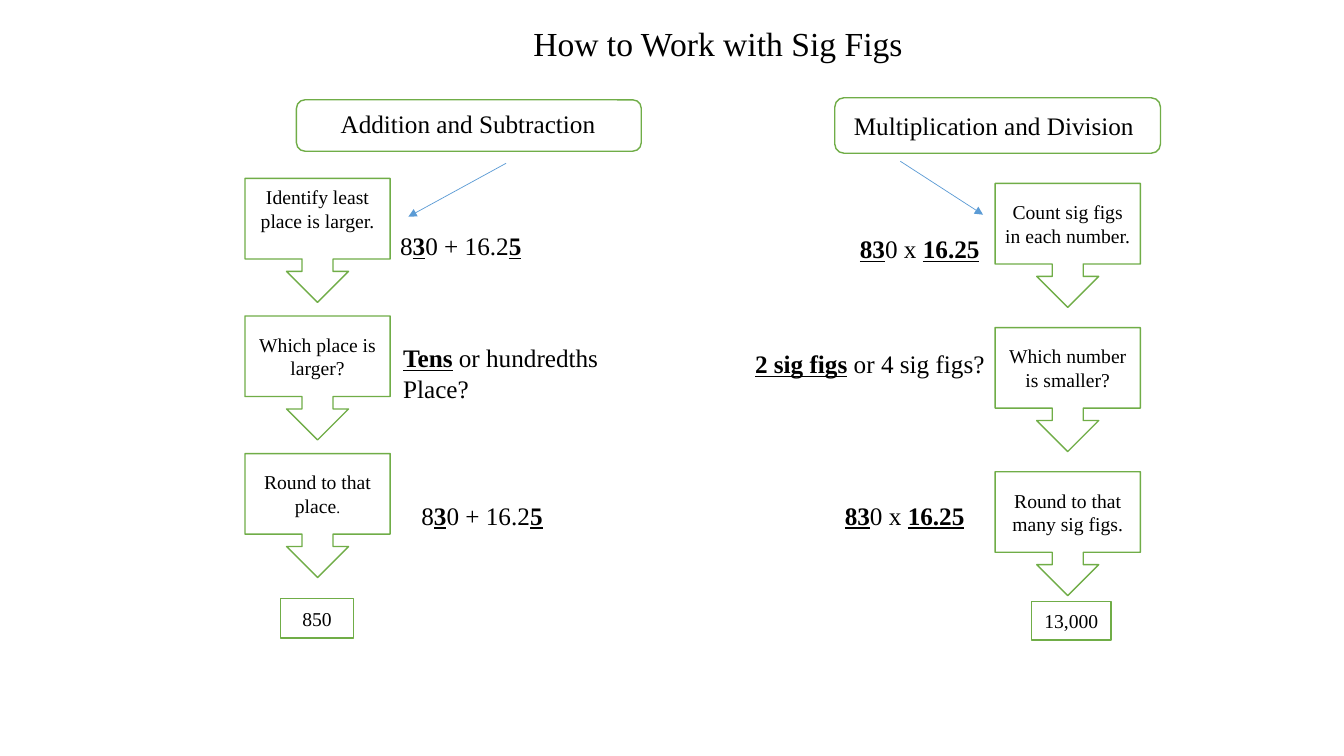
"""Builds a slide with two flowcharts on working with significant figures."""
from lxml import etree
from pptx import Presentation, util as u
from pptx.dml.color import RGBColor
from pptx.enum import shapes, text
from pptx.oxml.ns import qn

COLORS = {"ink": "000000", "paper": "FFFFFF", "green": "70AD47", "blue": "5B9BD5"}
KINDS = shapes.MSO_SHAPE

prs = Presentation()
prs.slide_width, prs.slide_height = u.Inches(13.33), u.Inches(7.5)
slide = prs.slides.add_slide(prs.slide_layouts[6])


def write(box, words, size=18, centered=False, middle=False, wrap=True, bottom=0.05, marked_size=None):
    """Fill a box; parts between asterisks are bold and underlined, or resized."""
    frame = box.text_frame
    frame.word_wrap = wrap
    frame.margin_bottom = u.Inches(bottom)
    frame.vertical_anchor = text.MSO_ANCHOR.MIDDLE if middle else text.MSO_ANCHOR.TOP
    for row, line in enumerate(words.split("\n")):
        paragraph = frame.add_paragraph() if row else frame.paragraphs[0]
        paragraph.alignment = text.PP_ALIGN.CENTER if centered else text.PP_ALIGN.LEFT
        for index, part in enumerate(line.split("*")):
            if not part:
                continue
            run = paragraph.add_run()
            run.text = part
            marked = index % 2 == 1
            run.font.name = "Times New Roman"
            run.font.size = u.Pt(marked_size if marked and marked_size else size)
            run.font.bold = run.font.underline = marked and not marked_size
            run.font.color.rgb = RGBColor.from_string(COLORS["ink"])


def outlined(kind, left, top, width, height):
    """Add a white shape with a green outline."""
    box = slide.shapes.add_shape(kind, *map(u.Inches, (left, top, width, height)))
    box.shadow.inherit = False
    box.fill.solid()
    box.fill.fore_color.rgb = RGBColor.from_string(COLORS["paper"])
    box.line.color.rgb = RGBColor.from_string(COLORS["green"])
    box.line.width = u.Pt(1)
    return box


for frame_box in [(2.94, 0.99, 3.42, 0.51), (8.28, 0.97, 3.23, 0.55)]:
    outlined(KINDS.FLOWCHART_ALTERNATE_PROCESS, *frame_box)

procedures = [
    (2.43, 1.77, 1.365, [
        ("Identify least place is larger.", {"bottom": 0.25}),
        ("Which place is larger?", {}),
        ("Round to that place*.*", {"marked_size": 11}),
    ]),
    (9.87, 1.82, 1.43, [
        ("Count sig figs in each number.", {}),
        ("Which number is smaller?", {}),
        ("Round to that many sig figs.", {}),
    ]),
]
for left, first_top, pitch, steps in procedures:
    for order, (step, options) in enumerate(steps):
        callout = outlined(KINDS.DOWN_ARROW_CALLOUT, left, first_top + order * pitch, 1.44, 1.23)
        for position, ratio in enumerate((0.25, 0.25, 0.25, 0.65)):
            callout.adjustments[position] = ratio
        write(callout, step, size=14, centered=True, middle=True, **options)

for result, place in [("850", (2.78, 5.94, 0.73, 0.39)), ("13,000", (10.23, 5.97, 0.79, 0.38))]:
    write(outlined(KINDS.RECTANGLE, *place), result, size=14, centered=True, middle=True)

for ends in [(5.02, 1.62, 4.05, 2.15), (8.93, 1.6, 9.75, 2.13)]:
    arrow = slide.shapes.add_connector(shapes.MSO_CONNECTOR.STRAIGHT, *map(u.Inches, ends))
    arrow.line.color.rgb = RGBColor.from_string(COLORS["blue"])
    arrow.line.width = u.Pt(0.5)
    etree.SubElement(arrow.line._get_or_add_ln(), qn("a:tailEnd"), type="triangle")
    etree.SubElement(arrow._element.spPr, qn("a:effectLst"))

title_style = {"size": 24, "centered": True, "middle": True, "wrap": False, "bottom": 0.31}
labels = [
    ("How to Work with Sig Figs", (2.78, 0.15, 8.68, 0.81), title_style),
    ("Addition and Subtraction", (3.28, 1.03, 2.74, 0.4), {}),
    ("Multiplication and Division", (8.37, 1.05, 3.05, 0.4), {}),
    ("8*3*0 + 16.2*5*", (3.87, 2.24, 1.57, 0.4), {}),
    ("*Tens* or hundredths\nPlace?", (3.9, 3.35, 2.43, 0.71), {}),
    ("8*3*0 + 16.2*5*", (4.08, 4.91, 1.58, 0.4), {}),
    ("*83*0 x *16.25*", (8.43, 2.27, 1.52, 0.4), {}),
    ("*2 sig figs* or 4 sig figs?", (7.39, 3.41, 2.5, 0.4), {}),
    ("*83*0 x *16.25*", (8.28, 4.91, 1.45, 0.4), {}),
]
for words, place, style in labels:
    write(slide.shapes.add_textbox(*map(u.Inches, place)), words, **style)

prs.save("out.pptx")
